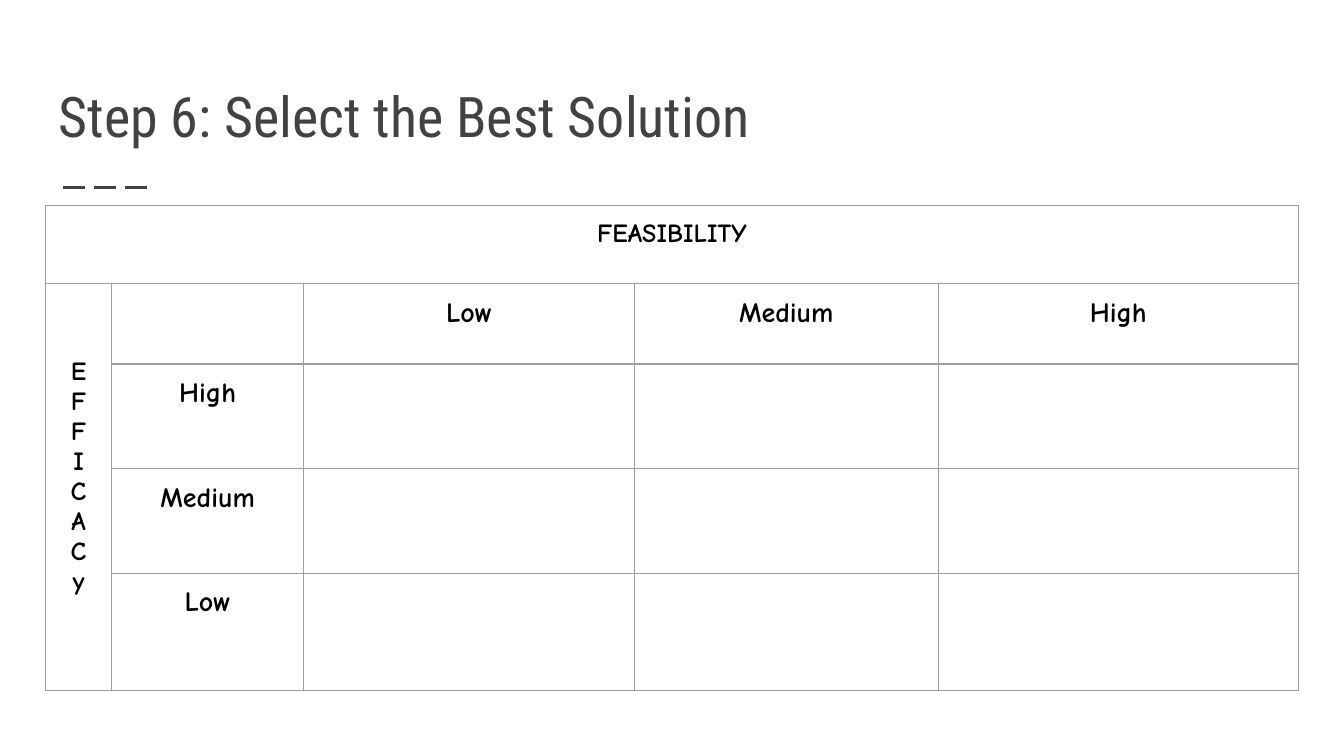
from lxml.etree import SubElement
from pptx import Presentation
from pptx.dml.color import RGBColor
from pptx.enum.dml import MSO_LINE
from pptx.enum.shapes import MSO_CONNECTOR as CONN
from pptx.enum.text import MSO_ANCHOR as ANCHOR, MSO_AUTO_SIZE as AUTO, PP_ALIGN as ALIGN
from pptx.oxml.ns import qn
from pptx.util import Cm, Pt

PAD = 0.25
COLS = [1.25, 3.63, 6.25, 5.74, 6.81]
ROWS = [1.47, 1.52, 1.98, 1.98, 2.21]
LEVELS = ["Low", "Medium", "High"]


def color(code):
    return RGBColor.from_string(code)


class Deck:
    ink, text, grid = "424242", "000000", "9E9E9E"
    head_font, body_font = "Roboto Condensed", "Comic Neue"

    def __init__(self):
        self.prs = Presentation()
        self.prs.slide_width, self.prs.slide_height = Cm(25.4), Cm(14.29)
        self.s = self.prs.slides.add_slide(self.prs.slide_layouts[5])

    def title(self, text, x, y, w, h):
        sp = self.s.shapes.title
        sp.left, sp.top, sp.width, sp.height = Cm(x), Cm(y), Cm(w), Cm(h)
        tf = sp.text_frame
        tf.text = text
        tf.auto_size = AUTO.NONE
        tf.vertical_anchor = ANCHOR.BOTTOM
        tf.margin_left = tf.margin_right = tf.margin_top = tf.margin_bottom = Cm(PAD)
        p = tf.paragraphs[0]
        p.alignment = ALIGN.LEFT
        p.font.name, p.font.size = self.head_font, Pt(30)
        p.font.color.rgb = color(self.ink)

    def dashes(self, x1, x2, y):
        ln = self.s.shapes.add_connector(CONN.STRAIGHT, Cm(x1), Cm(y), Cm(x2), Cm(y))
        ln.line.color.rgb = color(self.ink)
        ln.line.width = Pt(1.5)
        ln.line.dash_style = MSO_LINE.LONG_DASH
        SubElement(ln._element.spPr, qn("a:effectLst"))

    def table(self, x, y, cols, rows):
        frame = self.s.shapes.add_table(len(rows), len(cols), Cm(x), Cm(y),
                                        Cm(sum(cols)), Cm(sum(rows)))
        tbl = frame.table
        tbl.first_row = tbl.horz_banding = False
        for col, w in zip(tbl.columns, cols):
            col.width = Cm(w)
        for row, h in zip(tbl.rows, rows):
            row.height = Cm(h)
        for cell in tbl.iter_cells():
            self.borders(cell)
            cell.fill.background()
            cell.margin_left = cell.margin_right = Cm(PAD)
            cell.margin_top = cell.margin_bottom = Cm(PAD)
        return tbl

    def borders(self, cell):
        tc_pr = cell._tc.get_or_add_tcPr()
        for side in ("lnL", "lnR", "lnT", "lnB"):
            ln = SubElement(tc_pr, qn(f"a:{side}"), w=str(Pt(0.75)))
            fill = SubElement(ln, qn("a:solidFill"))
            SubElement(fill, qn("a:srgbClr"), val=self.grid)

    def label(self, cell, text, size):
        cell.text = text
        for p in cell.text_frame.paragraphs:
            p.alignment = ALIGN.CENTER
            p.font.name, p.font.size, p.font.bold = self.body_font, Pt(size), True
            p.font.color.rgb = color(self.text)


def main():
    deck = Deck()

    # Heading
    deck.title("Step 6: Select the Best Solution", 0.86, 1.04, 23.67, 2.03)
    deck.dashes(1.19, 2.9, 3.54)

    # Decision matrix with its two axis names
    tbl = deck.table(0.86, 3.89, COLS, ROWS)
    feasibility, efficacy = tbl.cell(0, 0), tbl.cell(1, 0)
    feasibility.merge(tbl.cell(0, 4))
    efficacy.merge(tbl.cell(4, 0))
    deck.label(feasibility, "FEASIBILITY", 14)
    deck.label(efficacy, "\n".join("EFFICACy"), 14)
    efficacy.margin_top = Cm(1.39)

    # Levels: rising to the right, falling downwards
    for i, level in enumerate(LEVELS):
        deck.label(tbl.cell(1, 2 + i), level, 15)
        deck.label(tbl.cell(4 - i, 1), level, 15)

    deck.prs.save("out.pptx")


if __name__ == "__main__":
    main()
